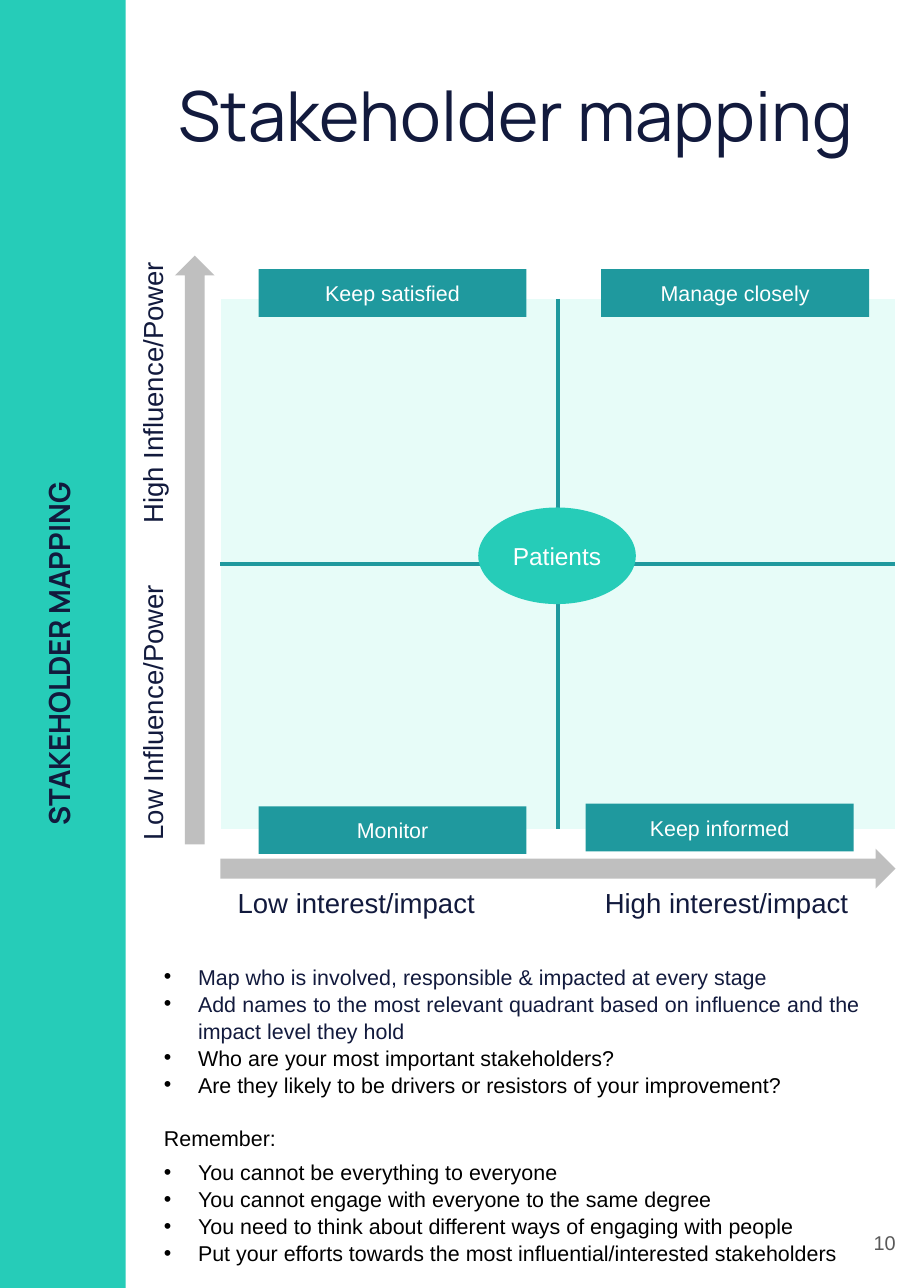
from dataclasses import dataclass, field

from lxml import etree
from pptx import Presentation
from pptx.dml.color import RGBColor
from pptx.enum.shapes import MSO_CONNECTOR, MSO_SHAPE
from pptx.enum.text import MSO_ANCHOR, PP_ALIGN
from pptx.oxml.ns import qn
from pptx.util import Emu, Inches, Pt

RECT, OVAL, UP_ARROW = MSO_SHAPE.RECTANGLE, MSO_SHAPE.OVAL, MSO_SHAPE.UP_ARROW
STRAIGHT = MSO_CONNECTOR.STRAIGHT
LEFT, CENTER, RIGHT, JUSTIFY = (
    PP_ALIGN.LEFT, PP_ALIGN.CENTER, PP_ALIGN.RIGHT, PP_ALIGN.JUSTIFY)
TOP, MIDDLE = MSO_ANCHOR.TOP, MSO_ANCHOR.MIDDLE

SLIDE_W, SLIDE_H = Inches(8.27), Inches(11.69)
TURQUOISE, TEAL, MINT = "26CCB8", "1F999E", "E7FCF8"
NAVY, GREY, DARK_GREY, WHITE, BLACK = "121A3D", "BFBFBF", "595959", "FFFFFF", "000000"
INDENT = Inches(0.31)


@dataclass(frozen=True)
class Box:
    """Visible area, in percent of the slide's width and height."""
    x: float
    y: float
    w: float
    h: float

    def emu(self, rotated: bool = False) -> tuple[Emu, Emu, Emu, Emu]:
        """Frame in EMU; a quarter turn swaps the sides about the centre."""
        x, w = self.x * SLIDE_W / 100, self.w * SLIDE_W / 100
        y, h = self.y * SLIDE_H / 100, self.h * SLIDE_H / 100
        if rotated:
            x, y, w, h = x + (w - h) / 2, y + (h - w) / 2, h, w
        return Emu(round(x)), Emu(round(y)), Emu(round(w)), Emu(round(h))


@dataclass(frozen=True)
class Style:
    size: float
    color: str
    name: str = "Arial"
    bold: bool = False
    align: PP_ALIGN = LEFT
    anchor: MSO_ANCHOR = TOP
    inset: tuple[float, float] = (0.1, 0.05)


@dataclass(frozen=True)
class Label:
    text: str
    box: Box
    style: Style
    rotation: int = 0


@dataclass(frozen=True)
class Block:
    kind: MSO_SHAPE
    box: Box
    fill: str
    rotation: int = 0
    text: str = ""
    style: Style = field(default=Style(14, WHITE, align=CENTER, anchor=MIDDLE))


@dataclass(frozen=True)
class Line:
    text: str
    color: str = BLACK
    bullet: bool = True
    before: float = 0


MAP = Box(24.2, 23.2, 74.1, 41.2)
AXIS = Style(18, NAVY)
NOTES = Style(14, BLACK, align=JUSTIFY)
NOTES_BOX = Box(16.8, 74.3, 78.8, 25.7)

LABELS = [
    Label("Stakeholder mapping", Box(15.8, 4.8, 81.6, 14.7),
          Style(45, NAVY, "Manrope", align=CENTER, inset=(0.1, 0.1))),
    Label("STAKEHOLDER MAPPING", Box(3.3, 29.4, 6.3, 42.8),
          Style(19, NAVY, "Manrope", True, CENTER, inset=(0.1, 0.1)), 270),
    Label("Low Influence/Power", Box(14.3, 43, 4.8, 23.1), AXIS, 270),
    Label("High Influence/Power", Box(14.3, 18.4, 4.8, 23.1), AXIS, 270),
    Label("Low interest/impact", Box(24.9, 68.4, 30.2, 3.4), AXIS),
    Label("High interest/impact", Box(65.2, 68.4, 30.2, 3.4), AXIS),
    Label("10", Box(93.8, 92.7, 6.1, 7.6),
          Style(13, DARK_GREY, align=RIGHT, anchor=MIDDLE, inset=(0.13, 0.13))),
]

QUADRANT_TAGS = [
    ("Keep informed", 64.3, 62.4),
    ("Monitor", 28.4, 62.6),
    ("Keep satisfied", 28.4, 20.9),
    ("Manage closely", 66, 20.9),
]

BLOCKS = [
    Block(RECT, Box(0, 0, 13.8, 100), TURQUOISE),
    Block(UP_ARROW, Box(19.2, 19.85, 4.35, 45.7), GREY),
    Block(UP_ARROW, Box(MAP.x, 65.9, MAP.w, 3.1), GREY, 90),
    Block(OVAL, Box(52.5, 39.4, 17.3, 7.5), TURQUOISE, text="Patients",
          style=Style(16, WHITE, align=CENTER, anchor=MIDDLE)),
    *(Block(RECT, Box(x, y, 29.4, 3.7), TEAL, text=text)
      for text, x, y in QUADRANT_TAGS),
]

NOTE_LINES = [
    Line("Map who is involved, responsible & impacted at every stage", NAVY),
    Line("Add names to the most relevant quadrant based on influence and "
         "the impact level they hold", NAVY),
    Line("Who are your most important stakeholders?"),
    Line("Are they likely to be drivers or resistors of your improvement?"),
    Line("Remember:", bullet=False, before=17),
    Line("You cannot be everything to everyone", before=5),
    Line("You cannot engage with everyone to the same degree"),
    Line("You need to think about different ways of engaging with people"),
    Line("Put your efforts towards the most influential/interested stakeholders"),
]


def rgb(value: str) -> RGBColor:
    return RGBColor.from_string(value)


def set_all(target, values: dict) -> None:
    for name, value in values.items():
        setattr(target, name, value)


def set_frame(tf, style: Style) -> None:
    dx, dy = (Inches(v) for v in style.inset)
    set_all(tf, {"word_wrap": True, "vertical_anchor": style.anchor,
                 "margin_left": dx, "margin_right": dx,
                 "margin_top": dy, "margin_bottom": dy})


def write(p, text: str, style: Style, color: str) -> None:
    p.alignment = style.align
    r = p.add_run()
    r.text = text
    set_all(r.font, {"size": Pt(style.size), "name": style.name, "bold": style.bold})
    r.font.color.rgb = rgb(color)


def add_bullet(p) -> None:
    pPr = p._p.get_or_add_pPr()
    pPr.set("marL", str(INDENT))
    pPr.set("indent", str(-INDENT))
    color = etree.SubElement(pPr, qn("a:buClr"))
    etree.SubElement(color, qn("a:srgbClr"), val=BLACK)
    etree.SubElement(pPr, qn("a:buFont"), typeface="Arial")
    etree.SubElement(pPr, qn("a:buChar"), char="•")


def draw_map(s) -> None:
    """Two by two table with a cross of lines over its inner borders."""
    table = s.shapes.add_table(2, 2, *MAP.emu()).table
    for cell in table.iter_cells():
        cell.fill.solid()
        cell.fill.fore_color.rgb = rgb(MINT)
    x, y, w, h = MAP.emu()
    mid_x, mid_y = x + w // 2, y + h // 2
    for ends in ((x, mid_y, x + w, mid_y), (mid_x, y, mid_x, y + h)):
        line = s.shapes.add_connector(STRAIGHT, *ends)
        line.line.color.rgb = rgb(TEAL)
        line.line.width = Pt(3)
        etree.SubElement(line._element.spPr, qn("a:effectLst"))


def draw_block(s, block: Block) -> None:
    sp = s.shapes.add_shape(block.kind, *block.box.emu(block.rotation != 0))
    sp.rotation = block.rotation
    sp.shadow.inherit = False
    sp.fill.solid()
    sp.fill.fore_color.rgb = rgb(block.fill)
    sp.line.fill.background()
    if block.text:
        set_frame(sp.text_frame, block.style)
        write(sp.text_frame.paragraphs[0], block.text, block.style, block.style.color)


def draw_label(s, label: Label) -> None:
    sp = s.shapes.add_textbox(*label.box.emu(label.rotation != 0))
    sp.rotation = label.rotation
    set_frame(sp.text_frame, label.style)
    write(sp.text_frame.paragraphs[0], label.text, label.style, label.style.color)


def draw_notes(s) -> None:
    tf = s.shapes.add_textbox(*NOTES_BOX.emu()).text_frame
    set_frame(tf, NOTES)
    for i, line in enumerate(NOTE_LINES):
        p = tf.add_paragraph() if i else tf.paragraphs[0]
        set_all(p, {"line_spacing": 1.05, "space_before": Pt(line.before)})
        write(p, line.text, NOTES, line.color)
        if line.bullet:
            add_bullet(p)


def main() -> None:
    prs = Presentation()
    set_all(prs, {"slide_width": SLIDE_W, "slide_height": SLIDE_H})
    s = prs.slides.add_slide(prs.slide_layouts[6])
    draw_map(s)
    for block in BLOCKS:
        draw_block(s, block)
    for label in LABELS:
        draw_label(s, label)
    draw_notes(s)
    prs.save("out.pptx")


if __name__ == "__main__":
    main()
